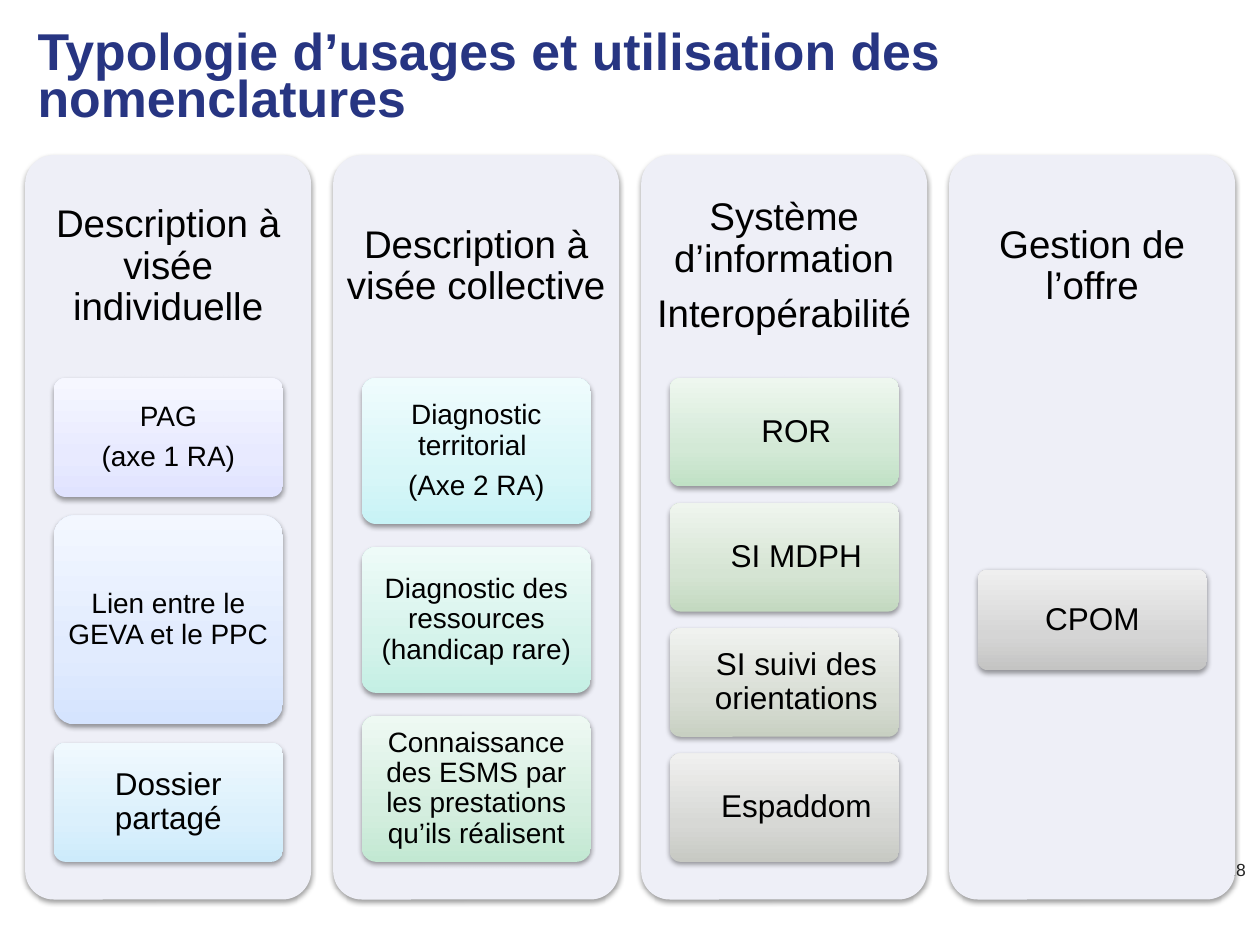
import copy
import pptx
import pptx.dml.color
import pptx.enum.shapes
import pptx.enum.text
import pptx.oxml
import pptx.oxml.ns
import pptx.util

Pt = pptx.util.Pt
RGBColor = pptx.dml.color.RGBColor
ANCHOR = pptx.enum.text.MSO_ANCHOR
ALIGN = pptx.enum.text.PP_ALIGN
ROUND = pptx.enum.shapes.MSO_SHAPE.ROUNDED_RECTANGLE

NAVY = RGBColor(0x27, 0x35, 0x82)
BLACK = RGBColor(0, 0, 0)
GREY = RGBColor(0x26, 0x26, 0x26)
PANEL = RGBColor(0xEE, 0xEF, 0xF7)

# Panel and card grid, in points
LEFT, TOP, WIDE, HIGH, STEP = 14.4, 88.6, 163.4, 425.4, 176
INSET, CARD_W, CARD_TOP, CARD_H = 16.3, 131, 216, 276.5
HEAD_H = 127.6

# Heading, indent, card height(s), cards: (lines, size, bottom, middle, top colour)
COLUMNS = [
    (["Description à visée individuelle"], 0, [68, 119.5, 68], [
        (["PAG", "(axe 1 RA)"], 16, "E0E3FF", "E8EAFF", "F6F7FF"),
        (["Lien entre le GEVA et le PPC"], 16, "D5E4FE", "E1EBFE", "F3F7FF"),
        (["Dossier partagé"], 18, "CDEBFB", "DBF0FC", "F0F9FE")]),
    (["Description à visée collective"], 0, [83.5] * 3, [
        (["Diagnostic territorial ", "(Axe 2 RA)"], 16,
         "C8F3F6", "D8F6F8", "EFFCFD"),
        (["Diagnostic des ressources (handicap rare)"], 16,
         "C4EFE4", "D5F3EB", "EEFBF8"),
        (["Connaissance des ESMS par les prestations qu’ils réalisent"], 16,
         "C2E8D2", "D4EEDF", "EEF9F3")]),
    (["Système d’information", "Interopérabilité"], 13.7, [62] * 4, [
        (["ROR"], 18, "C0E1C5", "D3E9D6", "EEF7EF"),
        (["SI MDPH"], 18, "C3D9C0", "D5E4D3", "EFF5EE"),
        (["SI suivi des orientations"], 18, "C8D0C2", "D8DDD4", "F0F2EF"),
        (["Espaddom"], 18, "C7C9C3", "D7D8D5", "F0F0EF")]),
    (["Gestion de l’offre"], 0, [57.5], [
        (["CPOM"], 18, "C4C4C3", "D5D5D5", "EFEFEF")]),
]

deck = pptx.Presentation()
deck.slide_width, deck.slide_height = Pt(720), Pt(540)
slide = deck.slides.add_slide(deck.slide_layouts[6])


def write(shape, lines, size, color, pad, align=ALIGN.CENTER, space=0.9,
          after=0.35, indent=0):
    frame = shape.text_frame
    frame.word_wrap = True
    frame.vertical_anchor = ANCHOR.MIDDLE
    frame.margin_left = frame.margin_right = Pt(pad[0])
    frame.margin_top = frame.margin_bottom = Pt(pad[1])
    for i, line in enumerate(lines):
        para = frame.add_paragraph() if i else frame.paragraphs[0]
        para.text = line
        para.alignment = align
        para.line_spacing = space
        para.space_after = Pt(round(size * after, 1))
        if indent:
            para._p.get_or_add_pPr().set("marL", str(Pt(indent)))
        para.font.size = Pt(size)
        para.font.name = "Arial"
        para.font.color.rgb = color


def add_round(x, y, w, h):
    shape = slide.shapes.add_shape(ROUND, Pt(x), Pt(y), Pt(w), Pt(h))
    shape.adjustments[0] = 0.1
    shape.line.fill.background()
    # Soft shadow straight below
    shape.shadow.inherit = False
    glow = pptx.oxml.parse_xml(
        f'<a:outerShdw {pptx.oxml.ns.nsdecls("a")} blurRad="{Pt(3.1)}" '
        f'dist="{Pt(1.6)}" dir="5400000" rotWithShape="0">'
        '<a:srgbClr val="000000"><a:alpha val="38000"/></a:srgbClr></a:outerShdw>')
    shape._element.spPr.find(pptx.oxml.ns.qn("a:effectLst")).append(glow)
    return shape


# Page number, partly behind the last panel
page = slide.shapes.add_textbox(Pt(692.6), Pt(482.4), Pt(27.4), Pt(28.8))
write(page, ["28"], 10, GREY, (0, 0), space=1.0, after=0)
page.text_frame.word_wrap = False

# Columns
for col, (head, indent, sizes, cards) in enumerate(COLUMNS):
    x = LEFT + col * STEP
    panel = add_round(x, TOP, WIDE, HIGH)
    panel.fill.solid()
    panel.fill.fore_color.rgb = PANEL
    label = slide.shapes.add_textbox(Pt(x), Pt(TOP), Pt(WIDE), Pt(HEAD_H))
    write(label, head, 22, BLACK, (6.5, 6.5))

    # Cards fill the height with equal gaps; a lone card is centred
    spare = CARD_H - sum(sizes)
    gap = spare / (len(sizes) - 1) if len(sizes) > 1 else 0
    y = CARD_TOP if gap else CARD_TOP + spare / 2
    for high, (lines, size, *shades) in zip(sizes, cards):
        card = add_round(x + INSET, y, CARD_W, high)
        card.fill.gradient()
        card.fill.gradient_angle = 90
        first = card._element.spPr.find(".//" + pptx.oxml.ns.qn("a:gs"))
        first.addnext(copy.deepcopy(first))
        for stop, place, shade in zip(card.fill.gradient_stops, (0, 0.35, 1), shades):
            stop.position = place
            stop.color.rgb = RGBColor.from_string(shade)
        pad = (3.2, 2.4) if size == 16 else (3.6, 2.7)
        write(card, lines, size, BLACK, pad, indent=indent)
        y += high + gap

# Title
title = slide.shapes.add_textbox(Pt(14.4), Pt(15.1), Pt(698.4), Pt(61.2))
write(title, ["Typologie d’usages et utilisation des nomenclatures"], 29.6, NAVY,
      (7.2, 3.6), ALIGN.LEFT, 0.75, 0)
title.text_frame.paragraphs[0].font.bold = True

deck.save("out.pptx")
